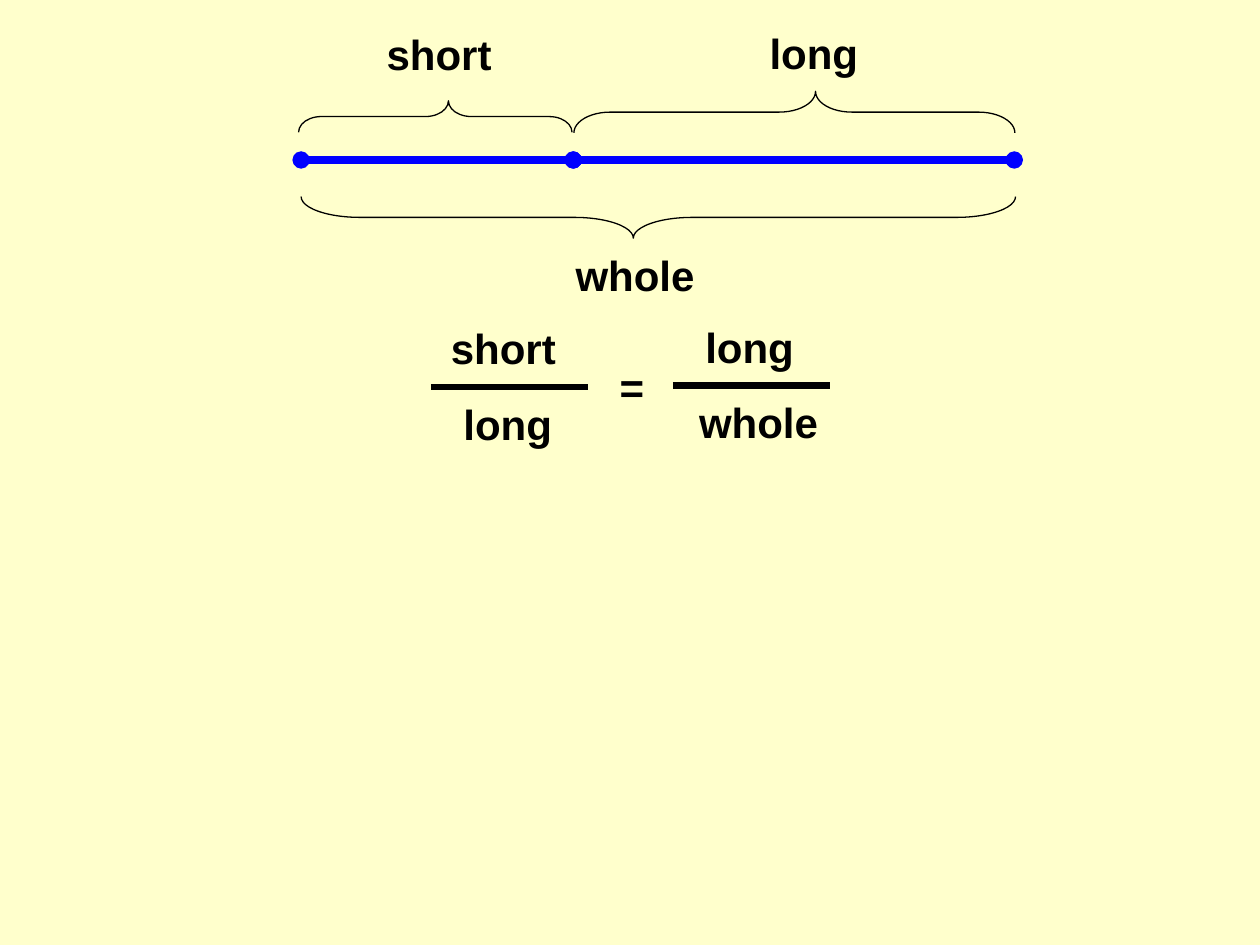
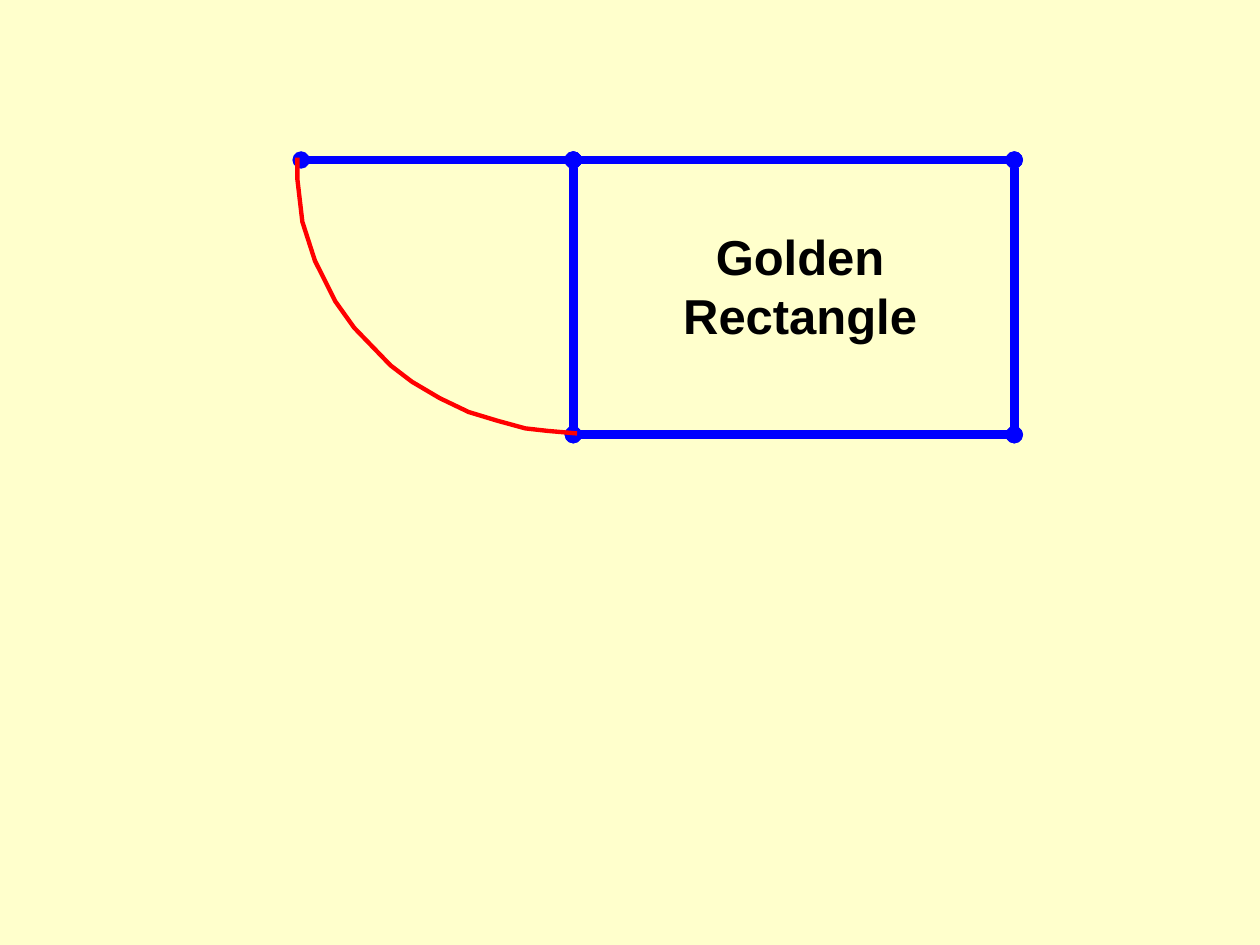
import dataclasses

import lxml.etree
import pptx
import pptx.dml.color
import pptx.enum.shapes
import pptx.enum.text
import pptx.oxml.ns
import pptx.util

Inches = pptx.util.Inches
Pt = pptx.util.Pt
RGB = pptx.dml.color.RGBColor
qn = pptx.oxml.ns.qn


@dataclasses.dataclass(frozen=True)
class Theme:
    paper: RGB = RGB(0xFF, 0xFF, 0xCC)
    ink: RGB = RGB(0, 0, 0)
    segment: RGB = RGB(0, 0, 0xFF)
    arc: RGB = RGB(0xFF, 0, 0)
    font: str = "Arial"
    label: int = 24
    title: int = 28
    segment_width: float = 5
    bar_width: float = 3.75
    arc_width: float = 2.5
    brace_width: float = 0.75


theme = Theme()


def add_text(s, text, x, y, w=1.17, h=0.5, size=theme.label, align=None):
    tf = s.shapes.add_textbox(Inches(x), Inches(y), Inches(w), Inches(h)).text_frame
    tf.word_wrap = True
    p = tf.paragraphs[0]
    p.alignment = align
    r = p.add_run()
    r.text = text
    r.font.name = theme.font
    r.font.size = Pt(size)
    r.font.bold = True
    r.font.color.rgb = theme.ink


def add_line(s, x1, y1, x2, y2, color=theme.segment, width=theme.segment_width, dots=True):
    line = s.shapes.add_connector(
        pptx.enum.shapes.MSO_CONNECTOR.STRAIGHT,
        Inches(x1), Inches(y1), Inches(x2), Inches(y2),
    )
    line.line.color.rgb = color
    line.line.width = Pt(width)
    if dots:
        ln = line.line._get_or_add_ln()
        for end in ("a:headEnd", "a:tailEnd"):
            lxml.etree.SubElement(ln, qn(end), type="oval", w="sm", len="sm")
    lxml.etree.SubElement(line._element.spPr, qn("a:effectLst"))


prs = pptx.Presentation()
prs.slide_width = Inches(10)
prs.slide_height = Inches(7.5)
slides = []
for _ in range(2):
    s = prs.slides.add_slide(prs.slide_layouts[6])
    s.background.fill.solid()
    s.background.fill.fore_color.rgb = theme.paper
    slides.append(s)
ratio_slide, rectangle_slide = slides

left, split, right, top, bottom = 2.39, 4.55, 8.05, 1.27, 3.45

s = ratio_slide
add_line(s, left, top, split, top)
add_line(s, split, top, right, top)

braces = [
    (3.33, -0.16, 0.25, 2.17, 0.722, 0.548, True),
    (6.14, -0.86, 0.33, 3.5, 0.875, 0.548, True),
    (5.06, -1.11, 0.33, 5.67, 1.417, 0.465, False),
]
for x, y, w, h, curl, tip, points_up in braces:
    sp = s.shapes.add_shape(
        pptx.enum.shapes.MSO_SHAPE.LEFT_BRACE, Inches(x), Inches(y), Inches(w), Inches(h)
    )
    sp.adjustments[0] = curl
    sp.adjustments[1] = tip
    sp.rotation = 270
    if points_up:
        sp._element.spPr.xfrm.set("flipH", "1")
    sp.shadow.inherit = False
    sp.fill.background()
    sp.line.color.rgb = theme.ink
    sp.line.width = Pt(theme.brace_width)

labels = [
    ("short", 2.97, 0.18), ("long", 6.01, 0.17), ("whole", 4.47, 1.93),
    ("short", 3.48, 2.51), ("long", 3.58, 3.11),
    ("long", 5.5, 2.5), ("whole", 5.45, 3.1),
]
for text, x, y in labels:
    add_text(s, text, x, y)
add_text(s, "=", 4.82, 2.82, w=0.33)

for x, y in [(3.42, 3.07), (5.34, 3.06)]:
    add_line(s, x, y, x + 1.25, y, color=theme.ink, width=theme.bar_width, dots=False)

s = rectangle_slide
corners = [(split, top), (right, top), (right, bottom), (split, bottom), (split, top)]
add_line(s, left, top, split, top)
for start, end in zip(corners, corners[1:]):
    add_line(s, *start, *end)

add_text(s, "Golden Rectangle", 5.31, 1.75, w=2.08, h=1.03, size=theme.title,
         align=pptx.enum.text.PP_ALIGN.CENTER)

arc_points = [
    (2.36, 1.25), (2.36, 1.42), (2.4, 1.76), (2.5, 2.07), (2.66, 2.39),
    (2.81, 2.6), (3.1, 2.9), (3.27, 3.03), (3.49, 3.16), (3.72, 3.27),
    (3.95, 3.34), (4.17, 3.4), (4.35, 3.42), (4.58, 3.44),
]
arc_points = [(Inches(x), Inches(y)) for x, y in arc_points]
builder = s.shapes.build_freeform(*arc_points[0])
builder.add_line_segments(arc_points[1:], close=False)
sp = builder.convert_to_shape()
sp.shadow.inherit = False
sp.fill.background()
sp.line.color.rgb = theme.arc
sp.line.width = Pt(theme.arc_width)

prs.save("out.pptx")
